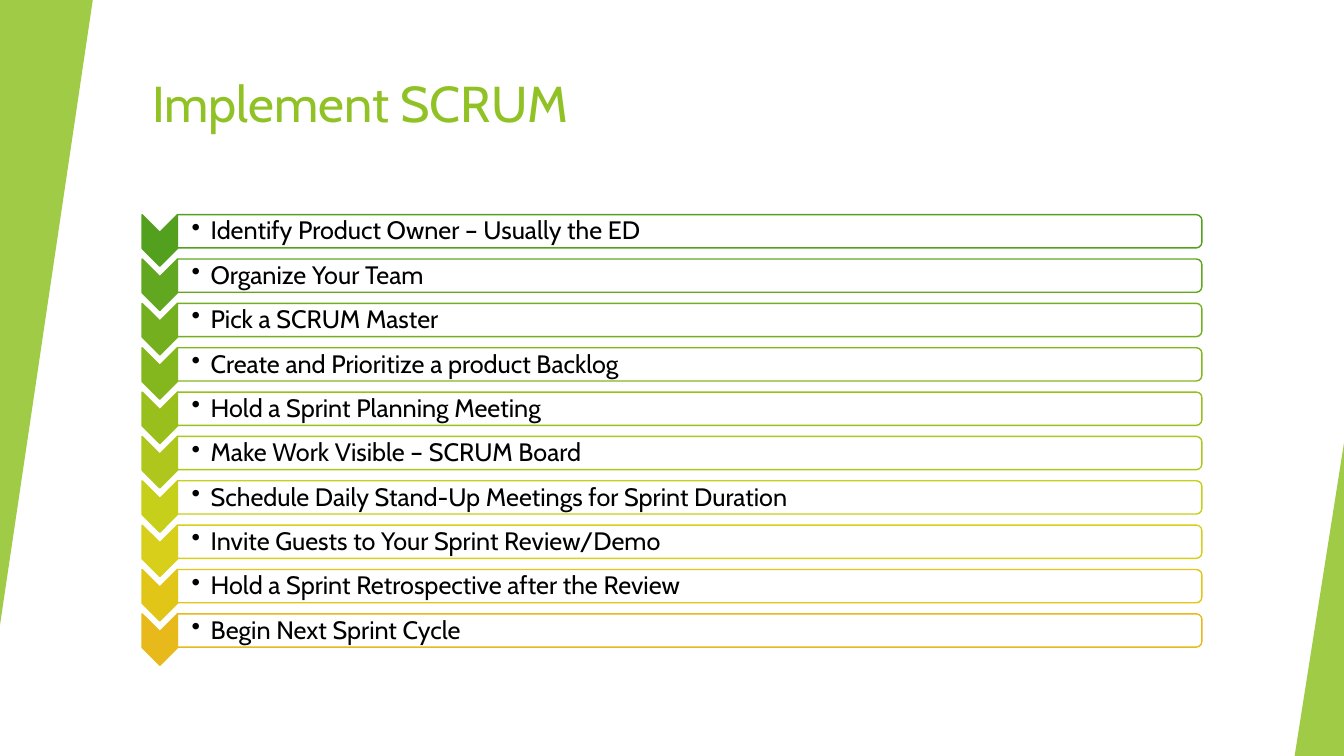
from lxml.etree import SubElement
from pptx import Presentation
from pptx.dml.color import RGBColor
from pptx.enum.shapes import MSO_SHAPE
from pptx.enum.text import MSO_ANCHOR, PP_ALIGN
from pptx.oxml.ns import qn
from pptx.util import Inches, Pt

WIDTH, HEIGHT = 13.33, 7.5
FONT = "Cabin"
GREEN = "90C226"
LEFT, TOP, PITCH = 1.41, 2.13, 0.44
CHEVRON_W, CHEVRON_H = 0.35, 0.51
BAR_W, BAR_H = 10.16, 0.33

STEPS = [
    ("Identify Product Owner – Usually the ED", "52A01E"),
    ("Organize Your Team", "61A71F"),
    ("Pick a SCRUM Master", "73AF1E"),
    ("Create and Prioritize a product Backlog", "84B71E"),
    ("Hold a Sprint Planning Meeting", "99BF1C"),
    ("Make Work Visible – SCRUM Board", "AFC71C"),
    ("Schedule Daily Stand-Up Meetings for Sprint Duration", "C6D01B"),
    ("Invite Guests to Your Sprint Review/Demo", "D8CF1A"),
    ("Hold a Sprint Retrospective after the Review", "E1C618"),
    ("Begin Next Sprint Cycle", "E7B91A"),
]


def paint(fill, color, alpha=100):
    fill.solid()
    fill.fore_color.rgb = RGBColor.from_string(color)
    if alpha < 100:
        srgb = fill._xPr.find(".//" + qn("a:srgbClr"))
        SubElement(srgb, qn("a:alpha"), val=str(alpha * 1000))


def add_preset(s, kind, x, y, w, h, color, adj, rotation=0, line=None, alpha=100):
    """Add a shape that covers the box x, y, w, h once it is rotated."""
    cx, cy = x + w / 2, y + h / 2
    if rotation == 90:
        w, h = h, w
    sp = s.shapes.add_shape(kind, Inches(cx - w / 2), Inches(cy - h / 2),
                            Inches(w), Inches(h))
    sp.rotation = rotation
    sp.shadow.inherit = False
    for i, value in enumerate(adj):
        sp.adjustments[i] = value
    paint(sp.fill, color, alpha)
    if line:
        paint(sp.line.fill, line)
        sp.line.width = Pt(1)
    else:
        sp.line.fill.background()
    return sp


def write(tf, text, size, color, anchor, insets, spacing=None, bullet=False):
    tf.word_wrap = True
    tf.vertical_anchor = anchor
    tf.margin_left, tf.margin_top, tf.margin_right, tf.margin_bottom = map(Inches, insets)
    p = tf.paragraphs[0]
    p.alignment = PP_ALIGN.LEFT
    if spacing:
        p.line_spacing = spacing
    if bullet:
        pPr = p._p.get_or_add_pPr()
        pPr.set("marL", str(Inches(0.19)))
        pPr.set("indent", str(-Inches(0.19)))
        SubElement(pPr, qn("a:buChar"), char="•")
    r = p.add_run()
    r.text = text
    r.font.name = FONT
    r.font.size = Pt(size)
    r.font.color.rgb = RGBColor.from_string(color)


def add_title(s, text):
    sp = s.shapes.title
    sp.left, sp.top, sp.width, sp.height = map(Inches, (1.41, 0.67, 11.15, 1.2))
    write(sp.text_frame, text, 36, GREEN, MSO_ANCHOR.TOP, (0.1, 0.05, 0.1, 0.05))


def add_step(s, row, text, color):
    y = TOP + row * PITCH
    bar_x = LEFT + CHEVRON_W
    add_preset(s, MSO_SHAPE.CHEVRON, LEFT, y, CHEVRON_W, CHEVRON_H, color,
               [0.5], rotation=90, line=color)
    add_preset(s, MSO_SHAPE.ROUND_2_SAME_RECTANGLE, bar_x, y, BAR_W, BAR_H, "FFFFFF",
               [0.167, 0], rotation=90, line=color, alpha=90)
    box = s.shapes.add_textbox(Inches(bar_x), Inches(y + 0.02), Inches(BAR_W), Inches(0.3))
    write(box.text_frame, text, 18, "000000", MSO_ANCHOR.MIDDLE,
          (0.14, 0.01, 0.01, 0.01), spacing=0.9, bullet=True)


def main():
    prs = Presentation()
    prs.slide_width, prs.slide_height = Inches(WIDTH), Inches(HEIGHT)
    s = prs.slides.add_slide(prs.slide_layouts[5])
    paint(s.background.fill, "FFFFFF")
    add_title(s, "Implement SCRUM")

    # Green wedges at the two edges
    add_preset(s, MSO_SHAPE.ISOSCELES_TRIANGLE, 0, 0, 0.92, 6.2, GREEN, [1],
               rotation=180, alpha=85)
    add_preset(s, MSO_SHAPE.ISOSCELES_TRIANGLE, WIDTH - 0.49, HEIGHT - 3.11, 0.49, 3.11,
               GREEN, [1], alpha=85)

    # Chevron list of steps
    for row, (text, color) in enumerate(STEPS):
        add_step(s, row, text, color)
    prs.save("out.pptx")


main()
